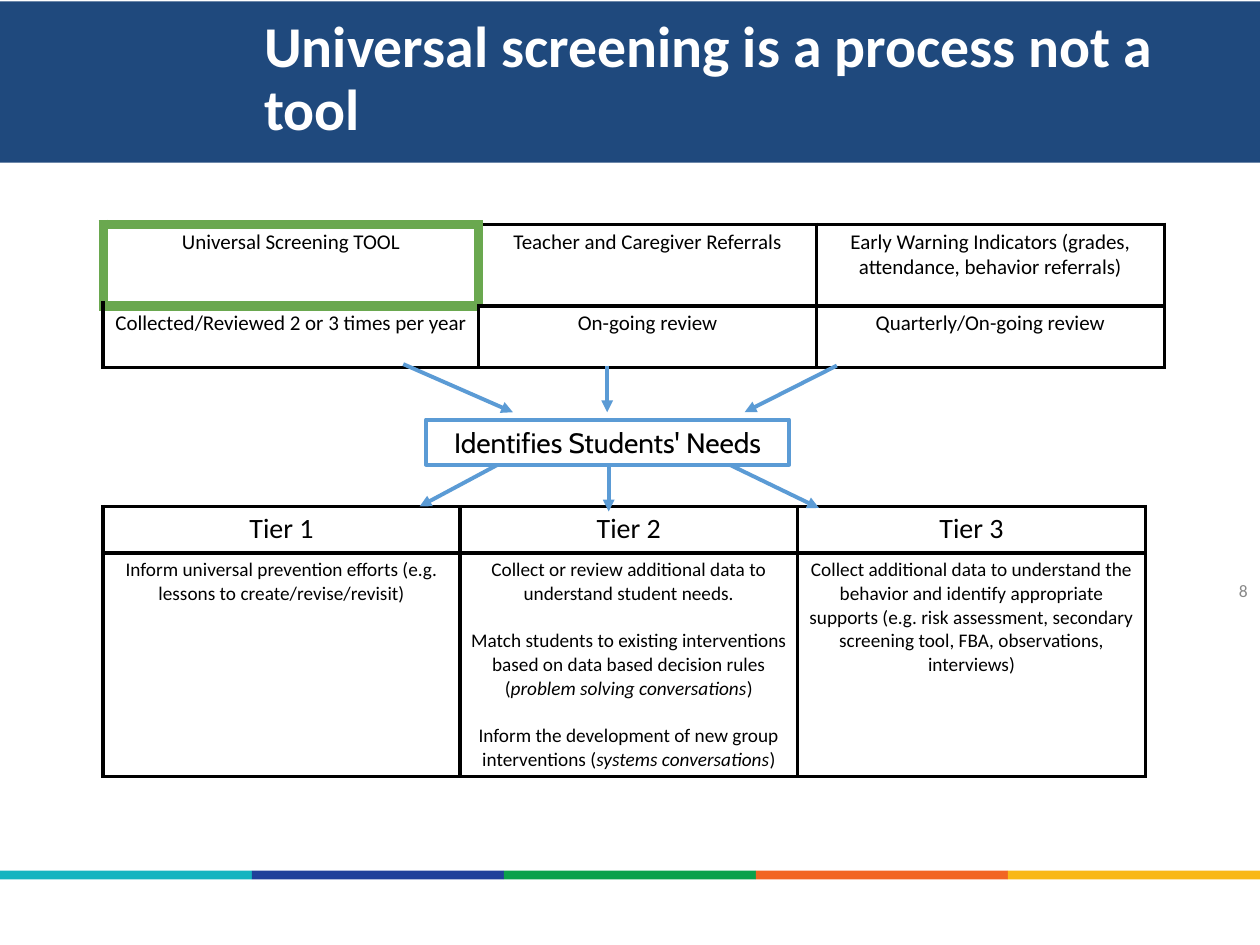
from lxml.etree import SubElement as Sub
from pptx import Presentation
from pptx.dml.color import RGBColor as RGB
from pptx.enum.shapes import MSO_CONNECTOR as Link, MSO_SHAPE as Shape
from pptx.enum.text import MSO_ANCHOR as Anchor, PP_ALIGN as Align
from pptx.oxml.ns import qn
from pptx.util import Cm, Pt

NAVY = RGB(0x1F, 0x49, 0x7D)
BLUE = RGB(0x5B, 0x9B, 0xD5)
GREEN = RGB(0x6A, 0xA8, 0x4F)
GREY = RGB(0x88, 0x88, 0x88)
BLACK = RGB(0, 0, 0)
WHITE = RGB(0xFF, 0xFF, 0xFF)
STRIPES = [RGB(0x14, 0xB4, 0xC0), RGB(0x20, 0x40, 0x9A), RGB(0x0B, 0xA1, 0x4B),
           RGB(0xF2, 0x65, 0x22), RGB(0xF9, 0xB8, 0x17)]

SOURCES = [
    ["Universal Screening TOOL", "Teacher and Caregiver Referrals",
     "Early Warning Indicators (grades, attendance, behavior referrals)"],
    ["Collected/Reviewed 2 or 3 times per year", "On-going review",
     "Quarterly/On-going review"],
]
# Asterisks enclose italic words; a line break starts a new paragraph
TIERS = [
    ["Tier 1", "Tier 2", "Tier 3"],
    ["Inform universal prevention efforts (e.g. lessons to create/revise/revisit)",
     "Collect or review additional data to understand student needs.\n"
     "Match students to existing interventions based on data based decision rules "
     "(*problem solving conversations*)\n"
     "Inform the development of new group interventions (*systems conversations*)",
     "Collect additional data to understand the behavior and identify appropriate "
     "supports (e.g. risk assessment, secondary screening tool, FBA, observations, "
     "interviews)"],
]
# Arrow ends, measured from the corner of the needs box
ARROWS = [
    (-0.46, -1.12, 1.75, -0.15), (3.65, -1.09, 3.65, -0.15), (8.28, -1.09, 6.42, -0.15),
    (1.44, 0.91, -0.13, 1.75), (3.68, 0.91, 3.68, 1.85), (6.12, 0.91, 7.92, 1.78),
]


def style(para, size, color, align=Align.CENTER, face="Calibri", bold=False):
    para.alignment = align
    font = para.font
    font.size, font.name, font.bold = Pt(size), face, bold
    font.color.rgb = color


def add_rect(slide, x, y, w, h, fill=None):
    rect = slide.shapes.add_shape(Shape.RECTANGLE, Cm(x), Cm(y), Cm(w), Cm(h))
    rect.shadow.inherit = False
    if fill is None:
        rect.fill.background()
    else:
        rect.fill.solid()
        rect.fill.fore_color.rgb = fill
        rect.line.fill.background()
    return rect


def add_text(slide, x, y, w, h, text):
    frame = slide.shapes.add_textbox(Cm(x), Cm(y), Cm(w), Cm(h)).text_frame
    frame.word_wrap = True
    frame.vertical_anchor = Anchor.MIDDLE
    frame.text = text
    return frame.paragraphs[0]


def add_header(slide, x, y, w, h):
    add_rect(slide, x, y, w, h, NAVY)
    title = add_text(slide, x + 5.08, y - 0.05, w - 5.08, h + 0.03,
                     "Universal screening is a process not a tool")
    title.line_spacing = 0.9
    style(title, 33, WHITE, Align.LEFT, bold=True)


def add_stripes(slide, x, y, w, h):
    step = w / len(STRIPES)
    for i, color in enumerate(STRIPES):
        add_rect(slide, x + i * step, y, step, h, color)


def set_edge(cell, side, color, width):
    edge = Sub(cell._tc.get_or_add_tcPr(), qn(f"a:ln{side}"), w=str(Pt(width)))
    fill = Sub(edge, qn("a:solidFill"))
    Sub(fill, qn("a:srgbClr"), val=str(color))


def fill_cell(cell, text, size, green):
    cell.margin_left = cell.margin_right = Cm(0.2)
    cell.margin_top = cell.margin_bottom = Cm(0.1)
    for side in "LRTB":
        color, width = (GREEN, 6) if side in green else (BLACK, 2.25)
        set_edge(cell, side, color, width)
    cell.fill.background()
    frame = cell.text_frame
    for i, line in enumerate(text.split("\n")):
        para = frame.add_paragraph() if i else frame.paragraphs[0]
        if i:
            para.space_before = Pt(13.5)
        for j, part in enumerate(line.split("*")):
            run = para.add_run()
            run.text = part
            if j % 2:
                run.font.italic = True
        style(para, size, BLACK)


def add_grid(slide, x, y, cols, rows, texts, sizes, green):
    """Place a ruled table; green maps a cell to its green sides."""
    table = slide.shapes.add_table(len(rows), len(cols), Cm(x), Cm(y),
                                   Cm(sum(cols)), Cm(sum(rows))).table
    table.first_row = table.horz_banding = False
    for col, width in zip(table.columns, cols):
        col.width = Cm(width)
    for r, height in enumerate(rows):
        table.rows[r].height = Cm(height)
        for c, text in enumerate(texts[r]):
            fill_cell(table.cell(r, c), text, sizes[r], green.get((r, c), ""))
    return table


def add_arrow(slide, x1, y1, x2, y2):
    arrow = slide.shapes.add_connector(Link.STRAIGHT, Cm(x1), Cm(y1), Cm(x2), Cm(y2))
    arrow.line.color.rgb = BLUE
    arrow.line.width = Pt(2.25)
    Sub(arrow.line._get_or_add_ln(), qn("a:tailEnd"), type="triangle")
    Sub(arrow._element.spPr, qn("a:effectLst"))


def add_needs(slide, x, y, w, h):
    box = add_rect(slide, x, y, w, h)
    box.line.color.rgb = BLUE
    box.line.width = Pt(2.25)
    frame = box.text_frame
    frame.margin_left = frame.margin_right = Cm(0.18)
    frame.margin_top = frame.margin_bottom = Cm(0.1)
    frame.vertical_anchor = Anchor.MIDDLE
    frame.text = "Identifies Students' Needs"
    style(frame.paragraphs[0], 16, BLACK, face="Cabin")
    for x1, y1, x2, y2 in ARROWS:
        add_arrow(slide, x + x1, y + y1, x + x2, y + y2)


def main():
    deck = Presentation()
    deck.slide_width, deck.slide_height = Cm(25.4), Cm(19.05)
    slide = deck.slides.add_slide(deck.slide_layouts[6])

    # Header band and footer stripes
    add_header(slide, 0, 0.03, 25.4, 3.25)
    add_stripes(slide, 0, 17.55, 25.4, 0.18)

    # Data sources above, tiers below
    sources = add_grid(slide, 2.08, 4.52, [7.57, 6.81, 7.01], [1.65, 1.24], SOURCES,
                       [12, 12], {(0, 0): "LRTB", (0, 1): "L", (1, 0): "T"})
    tool = sources.cell(0, 0).fill
    tool.solid()
    tool.fore_color.rgb = WHITE
    add_grid(slide, 2.08, 10.21, [7.19, 6.81, 7.01], [0.94, 4.5], TIERS, [16, 11], {})

    # Needs box with arrows between the tables
    add_needs(slide, 8.59, 8.46, 7.32, 0.91)

    # Slide number
    style(add_text(slide, 19.69, 11.53, 5.71, 0.76, "8"), 10, GREY, Align.RIGHT)

    deck.save("out.pptx")


if __name__ == "__main__":
    main()
